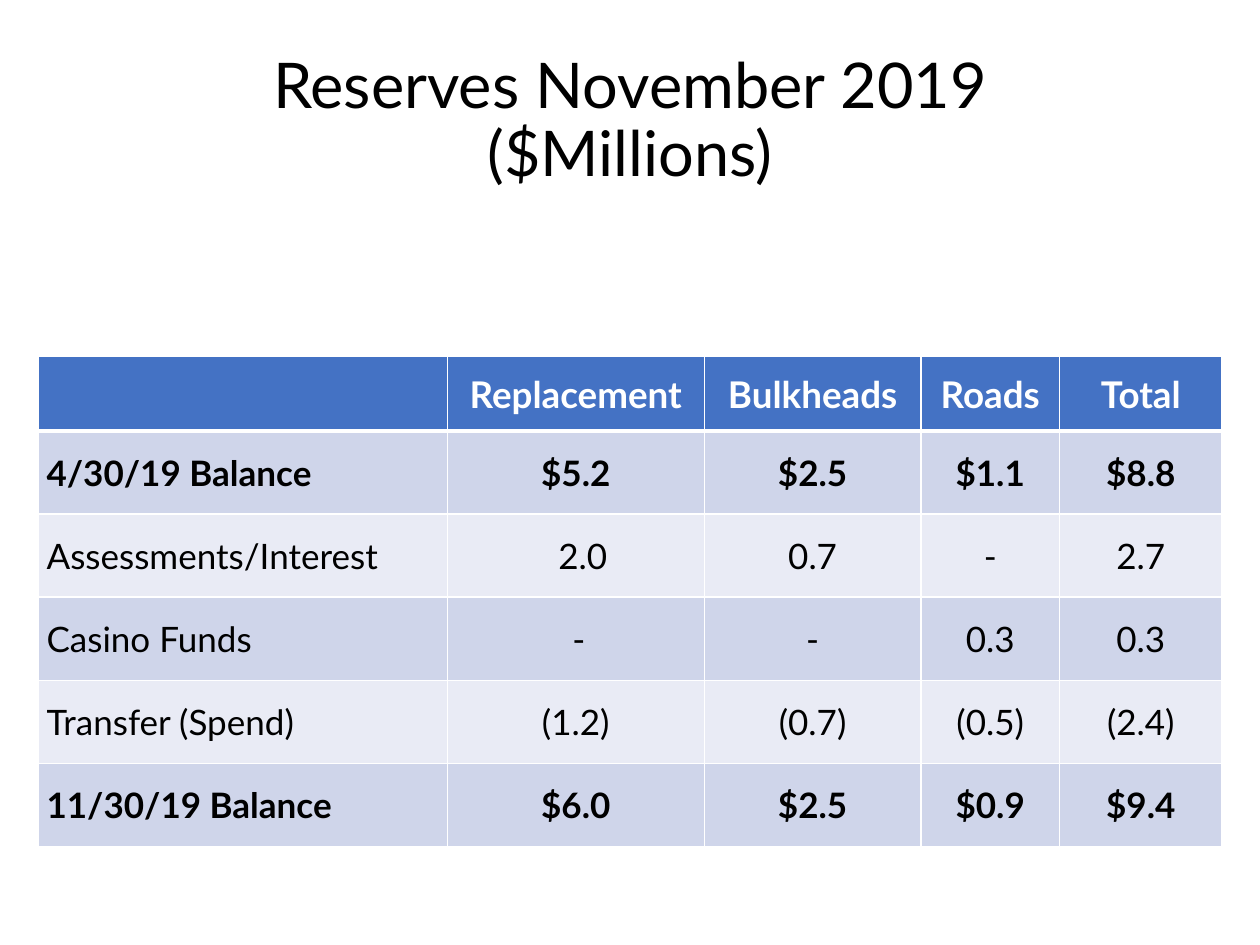
"""Build the reserves slide: a title above a table of balances."""
from dataclasses import dataclass

from lxml.etree import SubElement
from pptx import Presentation
from pptx.dml.color import RGBColor
from pptx.enum.text import MSO_ANCHOR as Anchor, PP_ALIGN as Align
from pptx.oxml.ns import qn
from pptx.util import Inches, Pt


@dataclass(frozen=True)
class Theme:
    """Colours, type sizes and line widths of the slide."""
    font: str = "Lato"
    black: str = "000000"
    white: str = "FFFFFF"
    header: str = "4472C4"
    bands: tuple = ("CFD5EA", "E9EBF5")
    title_size: int = 36
    header_size: int = 21
    body_size: int = 20
    thin: int = 1
    thick: int = 3


THEME = Theme()
COLUMN_WIDTHS = (3.25, 2.04, 1.72, 1.1, 1.29)
ROW_HEIGHTS = (0.59,) + (0.66,) * 5
ROWS = (
    ("", "Replacement", "Bulkheads", "Roads", "Total"),
    ("4/30/19 Balance", "$5.2", "$2.5", "$1.1", "$8.8"),
    ("Assessments/Interest", "2.0", "0.7", "-", "2.7"),
    ("Casino Funds", "-", "-", "0.3", "0.3"),
    ("Transfer (Spend)", "(1.2)", "(0.7)", "(0.5)", "(2.4)"),
    ("11/30/19 Balance", "$6.0", "$2.5", "$0.9", "$9.4"),
)
BOLD_ROWS = (0, 1, 5)
EXTRA_INDENTS = {(2, 1): 0.11, (3, 1): 0.05}


def set_values(target, values):
    """Set each attribute named in a dict on the target."""
    for name, value in values.items():
        setattr(target, name, value)


def write_text(paragraph, text, size, color, bold, align):
    """Put one formatted run in a paragraph."""
    paragraph.alignment = align
    run = paragraph.add_run()
    run.text = text
    set_values(run.font, {"name": THEME.font, "size": Pt(size), "bold": bold})
    run.font.color.rgb = RGBColor.from_string(color)


def add_title(slide, text):
    """Add the centred title."""
    box = slide.shapes.add_textbox(Inches(1.1), Inches(0.65), Inches(7.8), Inches(0.64))
    set_values(box.text_frame, {"word_wrap": True, "vertical_anchor": Anchor.MIDDLE})
    paragraph = box.text_frame.paragraphs[0]
    paragraph.line_spacing = 0.9
    write_text(paragraph, text, THEME.title_size, THEME.black, False, Align.CENTER)


def add_borders(cell, row):
    """Draw white cell borders, heavier under the header row."""
    properties = cell._tc.get_or_add_tcPr()
    for side in ("lnL", "lnR", "lnT", "lnB"):
        heavy = (row, side) in ((0, "lnB"), (1, "lnT"))
        width = Pt(THEME.thick if heavy else THEME.thin)
        line = SubElement(properties, qn(f"a:{side}"), w=str(width))
        fill = SubElement(line, qn("a:solidFill"))
        SubElement(fill, qn("a:srgbClr"), val=THEME.white)


def format_cell(cell, text, row, column):
    """Style one table cell and write its text."""
    is_header = row == 0
    set_values(cell, {
        "vertical_anchor": Anchor.MIDDLE,
        "margin_left": Inches(0.07 + EXTRA_INDENTS.get((row, column), 0)),
        "margin_right": Inches(0.07),
        "margin_top": Inches(0.05),
        "margin_bottom": Inches(0.05),
    })
    add_borders(cell, row)
    cell.fill.solid()
    color = THEME.header if is_header else THEME.bands[(row - 1) % 2]
    cell.fill.fore_color.rgb = RGBColor.from_string(color)
    if text:
        write_text(
            cell.text_frame.paragraphs[0], text,
            THEME.header_size if is_header else THEME.body_size,
            THEME.white if is_header else THEME.black,
            row in BOLD_ROWS, Align.CENTER if column else Align.LEFT)


def add_reserves_table(slide):
    """Add the table of reserve balances."""
    frame = slide.shapes.add_table(
        len(ROWS), len(COLUMN_WIDTHS), Inches(0.3), Inches(2.83),
        Inches(sum(COLUMN_WIDTHS)), Inches(sum(ROW_HEIGHTS)))
    table = frame.table
    for column, width in zip(table.columns, COLUMN_WIDTHS):
        column.width = Inches(width)
    for row, height in zip(table.rows, ROW_HEIGHTS):
        row.height = Inches(height)
    for row, texts in enumerate(ROWS):
        for column, text in enumerate(texts):
            format_cell(table.cell(row, column), text, row, column)


def main():
    """Build and save the presentation."""
    presentation = Presentation()
    set_values(presentation, {"slide_width": Inches(10), "slide_height": Inches(7.5)})
    slide = presentation.slides.add_slide(presentation.slide_layouts[6])
    add_title(slide, "Reserves November 2019 ($Millions)")
    add_reserves_table(slide)
    presentation.save("out.pptx")


if __name__ == "__main__":
    main()
